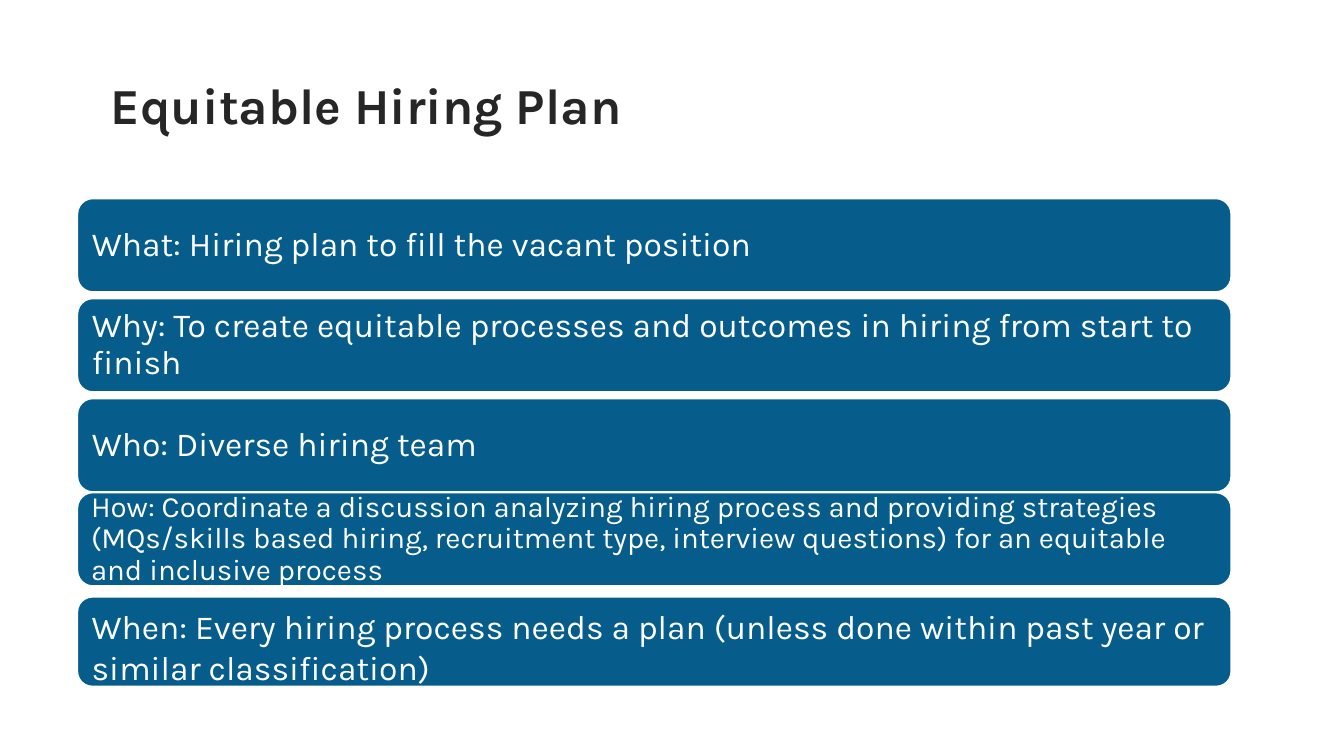
from pptx import Presentation
from pptx.dml.color import RGBColor
from pptx.enum.shapes import MSO_SHAPE as Shape
from pptx.enum.text import MSO_ANCHOR as Anchor, PP_ALIGN as Align
from pptx.util import Cm, Pt

BLUE = RGBColor(0x06, 0x5D, 0x8C)
WHITE = RGBColor(0xFF, 0xFF, 0xFF)
DARK = RGBColor(0x26, 0x26, 0x26)

LEFT, WIDTH, TALL = 1.95, 29.08, 2.36
TOP, STEP = 5, 2.52
MID = {"size": 24, "side": 0.25, "edge": 0.25, "anchor": Anchor.MIDDLE, "space": 0.9}
SMALL = {**MID, "size": 21, "side": 0.23, "edge": 0.23}
HIGH = {**MID, "edge": 0.13, "anchor": Anchor.TOP, "space": 1.0}
HEAD = {**HIGH, "size": 36}

BARS = [
    ("What: Hiring plan to fill the vacant position", TOP, TALL, MID),
    ("Why: To create equitable processes and outcomes in hiring from start to finish",
     TOP + STEP, TALL, MID),
    ("Who: Diverse hiring team", TOP + 2 * STEP, TALL, MID),
    ("How: Coordinate a discussion analyzing hiring process and providing strategies "
     "(MQs/skills based hiring, recruitment type, interview questions) for an equitable "
     "and inclusive process", 12.41, TALL, SMALL),
    ("When: Every hiring process needs a plan (unless done within past year or "
     "similar classification)", 15.04, 2.26, HIGH),
]


def put(item, values):
    """Set each named attribute of an item."""
    for name, value in values.items():
        setattr(item, name, value)


def write(frame, text, color, bold, size, side, edge, anchor, space):
    """Fill a text frame with one left-aligned paragraph."""
    put(frame, {
        "text": text, "word_wrap": True, "vertical_anchor": anchor,
        "margin_left": Cm(side), "margin_right": Cm(side),
        "margin_top": Cm(edge), "margin_bottom": Cm(edge),
    })
    para = frame.paragraphs[0]
    put(para, {"alignment": Align.LEFT, "line_spacing": space})
    font = para.runs[0].font
    put(font, {"name": "Karla", "size": Pt(size), "bold": bold})
    font.color.rgb = color


def add_title(slide, text, left, top, width, height):
    """Place and format the slide title."""
    title = slide.shapes.title
    put(title, {"left": Cm(left), "top": Cm(top), "width": Cm(width), "height": Cm(height)})
    write(title.text_frame, text, DARK, True, **HEAD)


def add_bar(slide, text, left, top, width, height, style):
    """Draw one rounded bar with its text."""
    bar = slide.shapes.add_shape(
        Shape.ROUNDED_RECTANGLE, Cm(left), Cm(top), Cm(width), Cm(height))
    bar.shadow.inherit = False
    bar.fill.solid()
    bar.fill.fore_color.rgb = BLUE
    bar.line.color.rgb = WHITE
    bar.line.width = Pt(1.25)
    write(bar.text_frame, text, WHITE, False, **style)


def main():
    """Build and save the slide."""
    deck = Presentation()
    put(deck, {"slide_width": Cm(33.87), "slide_height": Cm(19.05)})
    slide = deck.slides.add_slide(deck.slide_layouts[5])
    add_title(slide, "Equitable Hiring Plan", 2.54, 1.73, 28.8, 3.56)
    for text, top, height, style in BARS:
        add_bar(slide, text, LEFT, top, WIDTH, height, style)
    deck.save("out.pptx")


if __name__ == "__main__":
    main()
